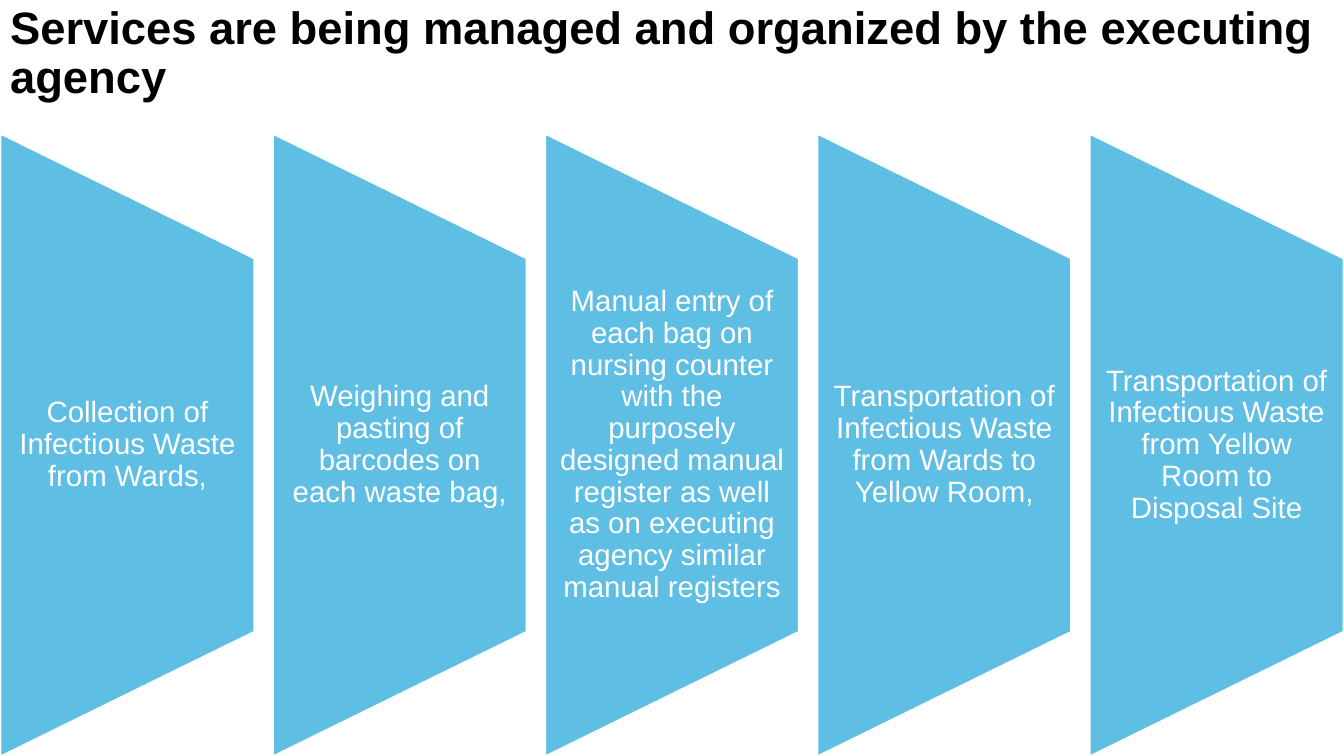
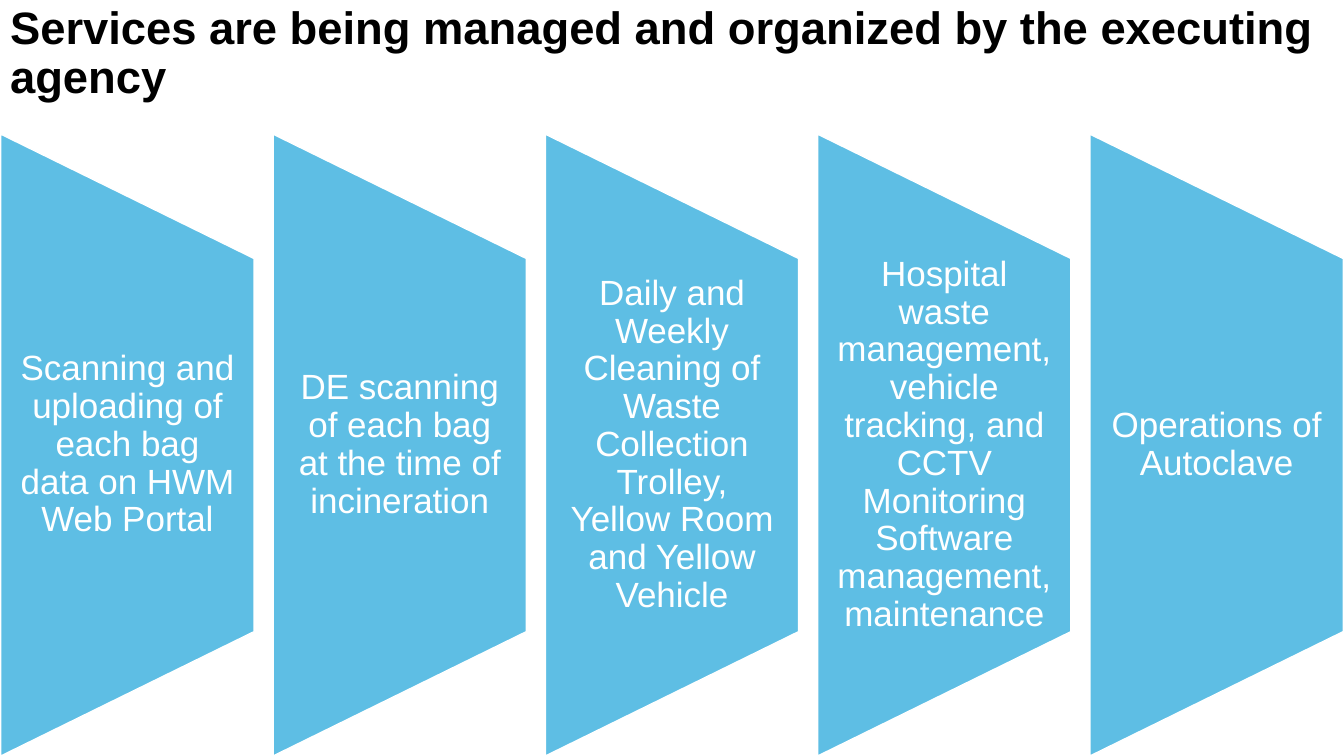
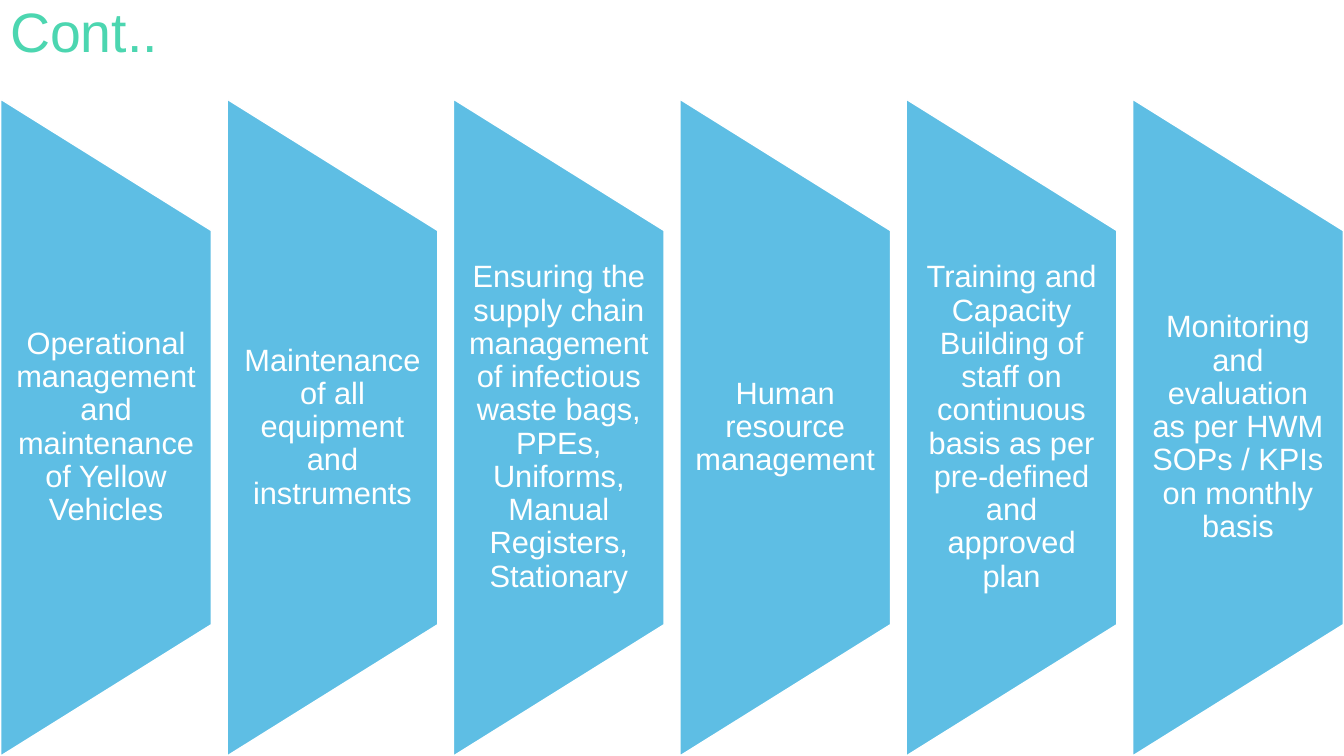
from pptx import Presentation
from pptx.dml.color import RGBColor
from pptx.enum.shapes import MSO_SHAPE
from pptx.enum.text import MSO_ANCHOR, MSO_AUTO_SIZE, PP_ALIGN
from pptx.util import Cm, Pt

# Shared style
TRAPEZOID = MSO_SHAPE.FLOWCHART_MANUAL_OPERATION
TOP, MIDDLE = MSO_ANCHOR.TOP, MSO_ANCHOR.MIDDLE
LEFT, CENTER = PP_ALIGN.LEFT, PP_ALIGN.CENTER
NO_AUTOFIT = MSO_AUTO_SIZE.NONE
TITLE_ONLY = 5
FONT = "Arial"
BLACK, WHITE, BLUE, GREEN = "000000", "FFFFFF", "5EBEE4", "4CD6B0"

# Page geometry in centimetres
SLIDE_WIDTH, SLIDE_HEIGHT = 33.87, 19.05
SIDE_MARGIN = 0.02
GAP_RATIO = 0.075   # gap between steps, as a share of the step width
TEXT_RATIO = 0.6    # height of the step text, as a share of the step height

SERVICES_TITLE = {
    "text": "Services are being managed and organized by the executing agency",
    "width": SLIDE_WIDTH, "height": 4.09,
    "font": {"size": Pt(32.4), "bold": True}, "color": BLACK,
}
CONTINUED_TITLE = {
    "text": "Cont..",
    "width": 31.55, "height": 1.52,
    "font": {"size": Pt(39.6), "bold": False}, "color": GREEN,
}

# Slide content
SLIDES = [
    {
        "title": SERVICES_TITLE, "top": 3.38, "size": 21, "inset": 0.36,
        "steps": [
            "Collection of Infectious Waste from Wards,",
            "Weighing and pasting of barcodes on each waste bag,",
            "Manual entry of each bag on nursing counter with the purposely "
            "designed manual register as well as on executing agency similar "
            "manual registers",
            "Transportation of Infectious Waste from Wards to Yellow Room,",
            "Transportation of Infectious Waste from Yellow Room to Disposal Site",
        ],
    },
    {
        "title": SERVICES_TITLE, "top": 3.38, "size": 25, "inset": 0.43,
        "steps": [
            "Scanning and uploading of each bag data on HWM Web Portal",
            "DE scanning of each bag at the time of incineration",
            "Daily and Weekly Cleaning of Waste Collection Trolley, "
            "Yellow Room and Yellow Vehicle",
            "Hospital waste management, vehicle tracking, and CCTV Monitoring "
            "Software management, maintenance",
            "Operations of Autoclave",
        ],
    },
    {
        "title": CONTINUED_TITLE, "top": 2.5, "size": 22, "inset": 0.38,
        "steps": [
            "Operational management and maintenance of Yellow Vehicles",
            "Maintenance of all equipment and instruments",
            "Ensuring the supply chain management of infectious waste bags, "
            "PPEs, Uniforms, Manual Registers, Stationary",
            "Human resource management",
            "Training and Capacity Building of staff on continuous basis "
            "as per pre-defined and approved plan",
            "Monitoring and evaluation as per HWM SOPs / KPIs on monthly basis",
        ],
    },
]


def rgb(color):
    return RGBColor.from_string(color)


def set_attributes(target, values):
    for name, value in values.items():
        setattr(target, name, value)


def write_text(shape, text, frame_format, font_format, color, alignment):
    """Put one formatted paragraph into a shape."""
    frame = shape.text_frame
    frame.text = text
    set_attributes(frame, {"word_wrap": True, "auto_size": NO_AUTOFIT, **frame_format})
    paragraph = frame.paragraphs[0]
    set_attributes(paragraph, {"alignment": alignment, "line_spacing": 0.9})
    set_attributes(paragraph.font, {"name": FONT, **font_format})
    paragraph.font.color.rgb = rgb(color)


def add_title(slide, title):
    shape = slide.shapes.title
    set_attributes(shape, {
        "left": Cm(0), "top": Cm(0),
        "width": Cm(title["width"]), "height": Cm(title["height"]),
    })
    write_text(shape, title["text"], {"vertical_anchor": TOP},
               title["font"], title["color"], LEFT)


def add_step(slide, text, left, top, width, height, size, inset):
    """Add a trapezoid turned on its side, with upright text over it."""
    # Before rotation the trapezoid lies flat around the same centre
    shape = slide.shapes.add_shape(
        TRAPEZOID, Cm(left + (width - height) / 2), Cm(top + (height - width) / 2),
        Cm(height), Cm(width))
    shape.rotation = 270
    shape.shadow.inherit = False
    shape.fill.solid()
    shape.fill.fore_color.rgb = rgb(BLUE)
    shape.line.color.rgb = rgb(WHITE)
    shape.line.width = Pt(1)

    label = slide.shapes.add_textbox(
        Cm(left), Cm(top + height * (1 - TEXT_RATIO) / 2),
        Cm(width), Cm(height * TEXT_RATIO))
    frame_format = {
        "vertical_anchor": MIDDLE, "margin_left": Cm(inset),
        "margin_right": Cm(inset), "margin_top": 0, "margin_bottom": 0,
    }
    write_text(label, text, frame_format, {"size": Pt(size)}, WHITE, CENTER)


def add_steps(slide, steps, top, size, inset):
    """Spread the steps evenly over the slide width."""
    count = len(steps)
    width = (SLIDE_WIDTH - 2 * SIDE_MARGIN) / (count + GAP_RATIO * (count - 1))
    pitch = width * (1 + GAP_RATIO)
    for index, text in enumerate(steps):
        add_step(slide, text, SIDE_MARGIN + index * pitch, top, width,
                 SLIDE_HEIGHT - top, size, inset)


def main():
    presentation = Presentation()
    presentation.slide_width = Cm(SLIDE_WIDTH)
    presentation.slide_height = Cm(SLIDE_HEIGHT)
    for content in SLIDES:
        slide = presentation.slides.add_slide(presentation.slide_layouts[TITLE_ONLY])
        add_title(slide, content["title"])
        add_steps(slide, content["steps"], content["top"],
                  content["size"], content["inset"])
    presentation.save("out.pptx")


if __name__ == "__main__":
    main()
